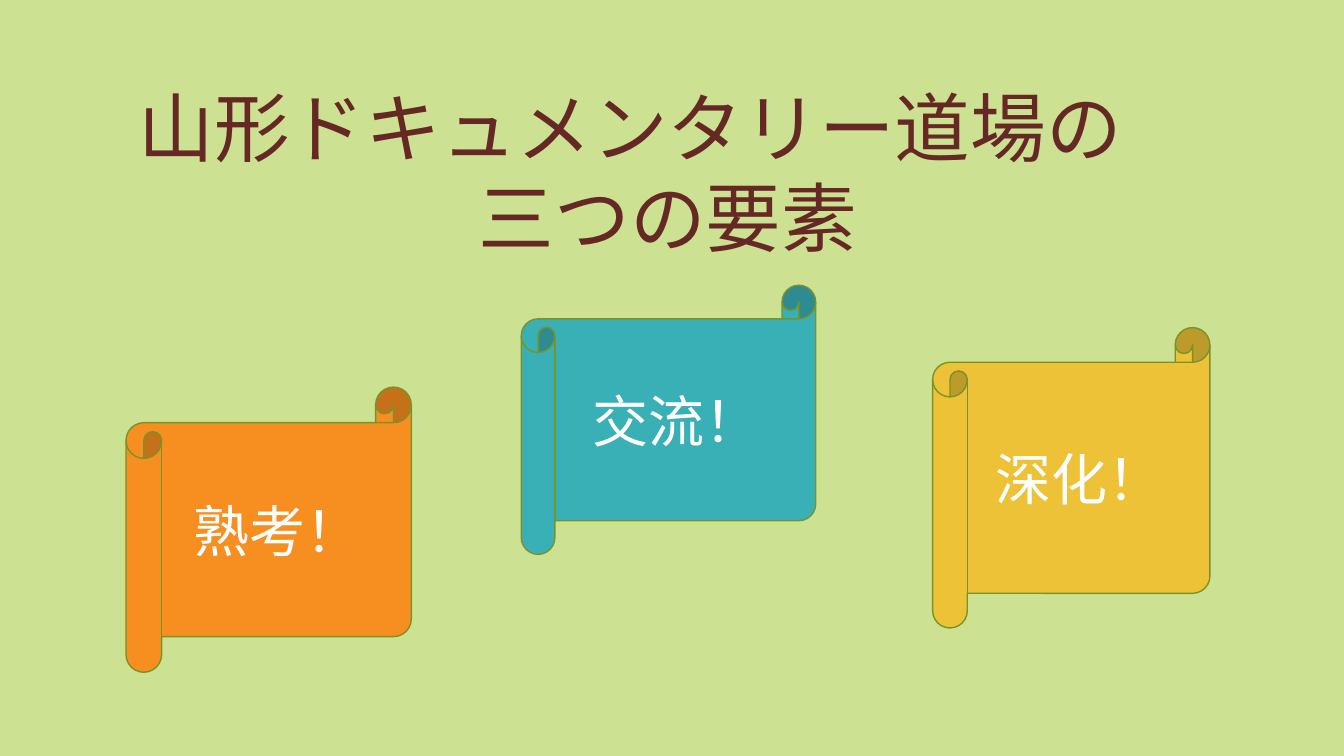
from dataclasses import dataclass

import pptx
import pptx.dml.color
import pptx.enum.shapes
import pptx.enum.text
import pptx.util
from pptx.util import Inches


@dataclass(frozen=True)
class Theme:
    font: str = "Calibri"
    title_size: int = 54
    element_size: int = 40
    background: str = "CCE192"
    title: str = "652825"
    label: str = "FFFFFF"
    outline: str = "789429"
    orange: str = "F68E20"
    teal: str = "38B0B6"
    yellow: str = "EDC236"


theme = Theme()


def rgb(code):
    return pptx.dml.color.RGBColor.from_string(code)


def write_centered(frame, text, size, color):
    paragraph = frame.paragraphs[0]
    paragraph.alignment = pptx.enum.text.PP_ALIGN.CENTER
    run = paragraph.add_run()
    run.text = text
    run.font.name = theme.font
    run.font.size = pptx.util.Pt(size)
    run.font.color.rgb = rgb(color)


deck = pptx.Presentation()
deck.slide_width = Inches(13.33)
deck.slide_height = Inches(7.5)
slide = deck.slides.add_slide(deck.slide_layouts[5])
slide.background.fill.solid()
slide.background.fill.fore_color.rgb = rgb(theme.background)

# Title
heading = slide.shapes.title
heading.left, heading.top = Inches(1), Inches(0.75)
heading.width, heading.height = Inches(11.25), Inches(1.92)
heading.text_frame.word_wrap = True
heading.text_frame.auto_size = pptx.enum.text.MSO_AUTO_SIZE.SHAPE_TO_FIT_TEXT
heading.text_frame.vertical_anchor = pptx.enum.text.MSO_ANCHOR.TOP
write_centered(heading.text_frame, "山形ドキュメンタリー道場の　三つの要素",
               theme.title_size, theme.title)

# The three elements, each on its own scroll: left, top, width, height
elements = [
    ("熟考！", theme.orange, (1.25, 3.84, 2.83, 2.83)),
    ("交流！", theme.teal, (5.17, 2.83, 2.92, 2.67)),
    ("深化！", theme.yellow, (9.25, 3.25, 2.75, 2.98)),
]
for label, color, box in elements:
    scroll = slide.shapes.add_shape(
        pptx.enum.shapes.MSO_SHAPE.HORIZONTAL_SCROLL, *map(Inches, box))
    scroll.shadow.inherit = False
    scroll.fill.solid()
    scroll.fill.fore_color.rgb = rgb(color)
    scroll.line.color.rgb = rgb(theme.outline)
    scroll.line.width = pptx.util.Pt(1)
    scroll.text_frame.word_wrap = True
    scroll.text_frame.vertical_anchor = pptx.enum.text.MSO_ANCHOR.MIDDLE
    write_centered(scroll.text_frame, label, theme.element_size, theme.label)

deck.save("out.pptx")
